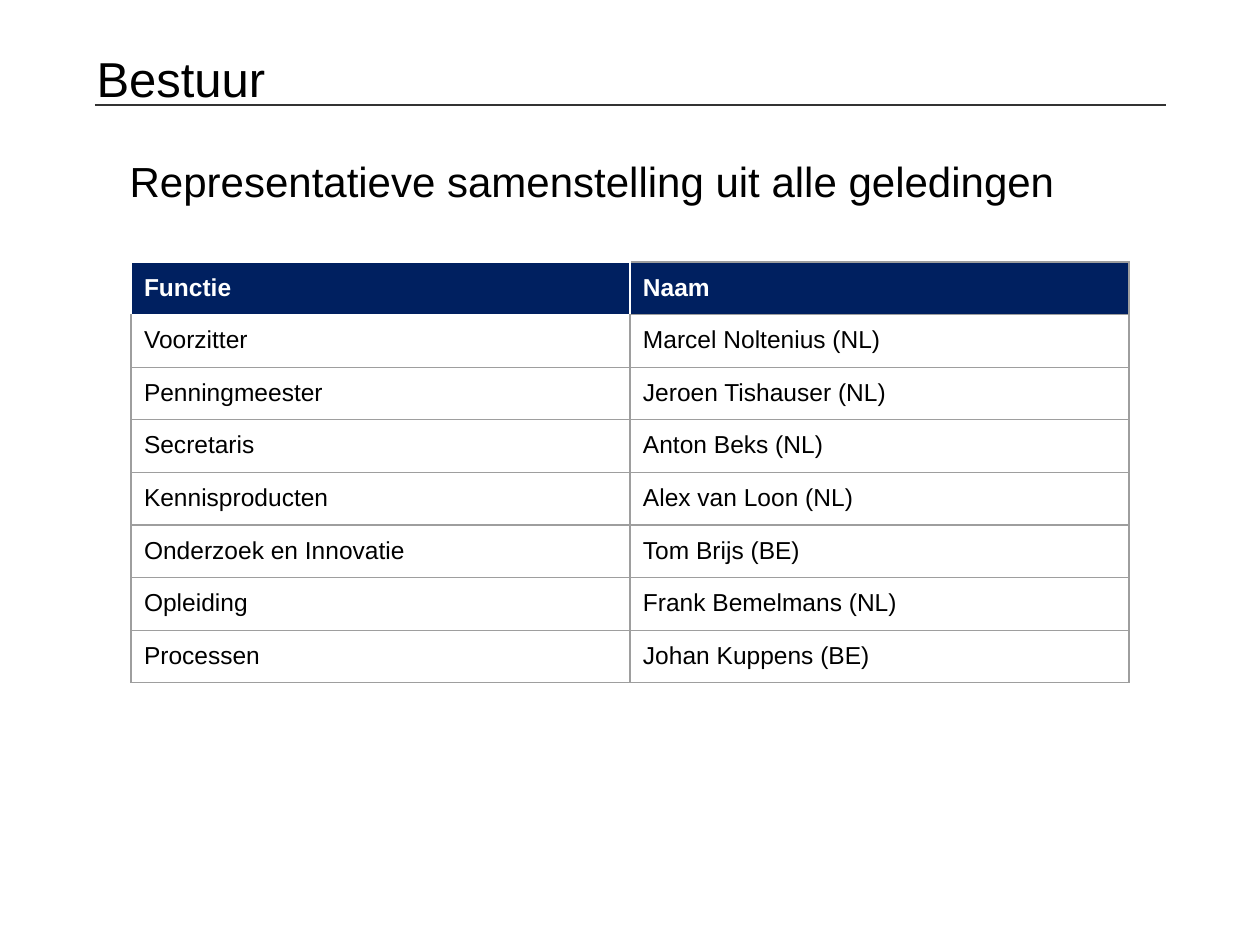
from lxml.etree import SubElement
from pptx import Presentation
from pptx.dml.color import RGBColor
from pptx.enum.shapes import MSO_CONNECTOR
from pptx.enum.text import MSO_ANCHOR, MSO_AUTO_SIZE, PP_ALIGN
from pptx.oxml.ns import qn
from pptx.util import Inches, Pt

PX = Inches(1) / 126
COLORS = {"text": "000000", "rule": "333333", "header": "002060",
          "header_text": "FFFFFF", "header_border": "FFFFFF", "border": "9E9E9E"}
ROWS = [
    ("Functie", "Naam"),
    ("Voorzitter", "Marcel Noltenius (NL)"),
    ("Penningmeester", "Jeroen Tishauser (NL)"),
    ("Secretaris", "Anton Beks (NL)"),
    ("Kennisproducten", "Alex van Loon (NL)"),
    ("Onderzoek en Innovatie", "Tom Brijs (BE)"),
    ("Opleiding", "Frank Bemelmans (NL)"),
    ("Processen", "Johan Kuppens (BE)"),
]


def px(value):
    return round(value * PX)


def set_format(target, **values):
    for name, value in values.items():
        setattr(target, name, value)


def set_font(paragraph, size, color, bold=False):
    set_format(paragraph.font, name="Arial", size=Pt(size), bold=bold)
    paragraph.font.color.rgb = RGBColor.from_string(COLORS[color])


def fill_placeholder(shape, box, text, size, top_inset):
    left, top, width, height = map(px, box)
    set_format(shape, left=left, top=top, width=width, height=height)
    frame = shape.text_frame
    set_format(frame, text=text, word_wrap=True, auto_size=MSO_AUTO_SIZE.NONE,
               vertical_anchor=MSO_ANCHOR.TOP, margin_top=px(top_inset))
    paragraph = frame.paragraphs[0]
    set_format(paragraph, alignment=PP_ALIGN.LEFT, space_before=Pt(0))
    return paragraph


def add_heading(slide, box):
    """Place the title and the rule under it."""
    left, top, width, height = box
    title = fill_placeholder(slide.shapes.title, (left, top, 893, 60), "Bestuur", 28, 11)
    set_font(title, 28, "text")
    rule_y = px(top + height)
    rule = slide.shapes.add_connector(
        MSO_CONNECTOR.STRAIGHT, px(left + 11), rule_y, px(left + width), rule_y)
    rule.line.width = Pt(0.75)
    rule.line.color.rgb = RGBColor.from_string(COLORS["rule"])
    SubElement(rule._element.spPr, qn("a:effectLst"))


def add_statement(slide, box):
    paragraph = fill_placeholder(
        slide.placeholders[1], box,
        "Representatieve samenstelling uit alle geledingen", 24, 10)
    properties = paragraph._p.get_or_add_pPr()
    properties.set("marL", str(px(48)))
    properties.set("indent", str(px(-26)))
    SubElement(properties, qn("a:buNone"))
    set_font(paragraph, 24, "text")


def set_borders(cell, colors):
    """Draw the left, right, top and bottom borders, in that order."""
    properties = cell._tc.get_or_add_tcPr()
    for position, (side, color) in enumerate(zip("LRTB", colors)):
        line = properties.makeelement(qn(f"a:ln{side}"), {"w": str(Pt(0.75))})
        fill = SubElement(line, qn("a:solidFill"))
        SubElement(fill, qn("a:srgbClr"), val=COLORS[color])
        properties.insert(position, line)


def border_colors(row, column):
    first_header = row == 0 and column == 0
    white = (row == 0, first_header, first_header or (row == 1 and column == 0), first_header)
    return ["header_border" if side else "border" for side in white]


def add_board_table(slide, box):
    left, top, width, height = map(px, box)
    table = slide.shapes.add_table(len(ROWS), len(ROWS[0]), left, top, width, height).table
    for row, texts in enumerate(ROWS):
        table.rows[row].height = height // len(ROWS)
        for column, text in enumerate(texts):
            cell = table.cell(row, column)
            set_format(cell, text=text, vertical_anchor=MSO_ANCHOR.TOP,
                       margin_left=px(13), margin_right=px(13),
                       margin_top=px(12), margin_bottom=px(12))
            if row == 0:
                cell.fill.solid()
                cell.fill.fore_color.rgb = RGBColor.from_string(COLORS["header"])
            else:
                cell.fill.background()
            set_font(cell.text_frame.paragraphs[0], 14,
                     "text" if row else "header_text", bold=row == 0)
            set_borders(cell, border_colors(row, column))


def main():
    presentation = Presentation()
    set_format(presentation, slide_width=Inches(10), slide_height=Inches(7.5))
    slide = presentation.slides.add_slide(presentation.slide_layouts[1])
    add_heading(slide, (84, 37, 1082, 68))
    add_statement(slide, (95, 145, 1071, 696))
    add_board_table(slide, (131, 262, 998, 421))
    presentation.save("out.pptx")


if __name__ == "__main__":
    main()
